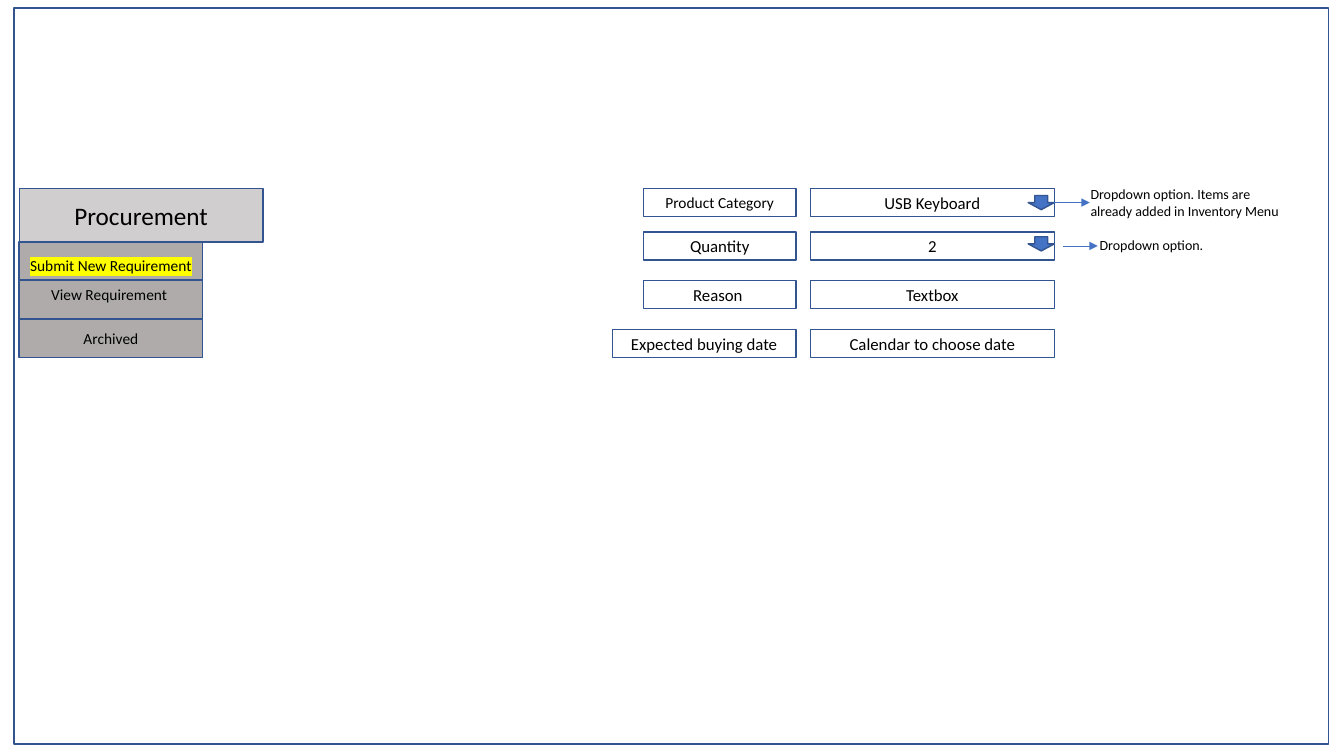
import pptx
import pptx.util
import pptx.dml.color
import pptx.enum.shapes
import pptx.enum.text
import pptx.oxml
import pptx.oxml.ns

HEX = {
    "edge": "325491",
    "blue": "4472C4",
    "head": "D0CECE",
    "item": "AFABAB",
    "text": "000000",
    "mark": "FFFF00",
}
FONT = "Calibri"
COLS = ROWS = 100
KIND = pptx.enum.shapes.MSO_SHAPE
ALIGN = pptx.enum.text.PP_ALIGN


def tint(name):
    return pptx.dml.color.RGBColor.from_string(HEX[name])


class Board:
    def __init__(self, deck):
        self.slide = deck.slides.add_slide(deck.slide_layouts[6])
        self.col = deck.slide_width / COLS
        self.row = deck.slide_height / ROWS

    def place(self, left, top, width, height):
        return (round(left * self.col), round(top * self.row),
                round(width * self.col), round(height * self.row))

    def letter(self, shape, text, size, align):
        frame = shape.text_frame
        frame.word_wrap = True
        frame.text = text
        para = frame.paragraphs[0]
        para.alignment = align
        font = para.runs[0].font
        font.name = FONT
        font.size = pptx.util.Pt(size)
        font.color.rgb = tint("text")

    def box(self, spot, text="", size=12, fill=None, kind=KIND.RECTANGLE):
        shape = self.slide.shapes.add_shape(kind, *self.place(*spot))
        shape.shadow.inherit = False
        if fill:
            shape.fill.solid()
            shape.fill.fore_color.rgb = tint(fill)
        else:
            shape.fill.background()
        shape.line.color.rgb = tint("edge")
        shape.line.width = pptx.util.Pt(1)
        if text:
            frame = shape.text_frame
            frame.vertical_anchor = pptx.enum.text.MSO_ANCHOR.MIDDLE
            frame.margin_left = frame.margin_right = pptx.util.Inches(0.05)
            frame.margin_top = frame.margin_bottom = 0
            self.letter(shape, text, size, ALIGN.CENTER)
        return shape

    def note(self, spot, text):
        shape = self.slide.shapes.add_textbox(*self.place(*spot))
        self.letter(shape, text, 10, ALIGN.LEFT)

    def arrow(self, start, end, row, source=None):
        left, top, width, _ = self.place(start, row, end - start, 0)
        line = self.slide.shapes.add_connector(
            pptx.enum.shapes.MSO_CONNECTOR.STRAIGHT, left, top, left + width, top)
        if source is not None:
            line.begin_connect(source, 3)
            line.end_y = line.begin_y
        line.line.color.rgb = tint("blue")
        line.line.width = pptx.util.Pt(0.5)
        space = pptx.oxml.ns.nsdecls("a")
        stroke = line.line._get_or_add_ln()
        stroke.append(pptx.oxml.parse_xml(f'<a:tailEnd {space} type="triangle"/>'))
        stroke.addnext(pptx.oxml.parse_xml(f"<a:effectLst {space}/>"))

    def mark(self, shape):
        run = shape.text_frame.paragraphs[0].runs[0]
        fill = run.font._element.find(pptx.oxml.ns.qn("a:solidFill"))
        space = pptx.oxml.ns.nsdecls("a")
        fill.addnext(pptx.oxml.parse_xml(
            f'<a:highlight {space}><a:srgbClr val="{HEX["mark"]}"/></a:highlight>'))


def main():
    deck = pptx.Presentation()
    deck.slide_width = pptx.util.Inches(13.33)
    deck.slide_height = pptx.util.Inches(7.5)
    board = Board(deck)

    board.box((1.05, 1.07, 97.8, 97.33))

    board.box((1.43, 24.93, 18.15, 7.07), "Procurement", 18, "head")
    names = ("Submit New Requirement", "View Requirement ", "Archived")
    menu = [board.box((1.43, 32 + 5.13 * step, 13.65, 5.07), name, 11, "item")
            for step, name in enumerate(names)]
    board.mark(menu[0])
    menu[0].text_frame.margin_top = pptx.util.Inches(0.09)
    menu[1].text_frame.margin_bottom = pptx.util.Inches(0.1)

    form = (
        (24.93, "Product Category", 11, 11.33, "USB Keyboard"),
        (30.67, "Quantity", 12, 11.33, "2"),
        (37.07, "Reason ", 12, 11.33, "Textbox"),
        (43.6, "Expected buying date", 12, 13.65, "Calendar to choose date"),
    )
    fields = []
    for top, label, size, width, value in form:
        board.box((59.22 - width, top, width, 3.73), label, size)
        fields.append(board.box((60.3, top, 18.15, 3.73), value))

    for top in (25.87, 31.33):
        board.box((76.5, top, 1.95, 1.87), fill="blue", kind=KIND.DOWN_ARROW)

    board.arrow(78.45, 81.08, 26.8, fields[0])
    board.note((80.4, 23.87, 15.68, 5.87),
               "Dropdown option. Items are already added in Inventory Menu")
    board.arrow(79.13, 81.68, 32.53)
    board.note((81.08, 30.67, 15.68, 3.6), "Dropdown option.")

    deck.save("out.pptx")


if __name__ == "__main__":
    main()
